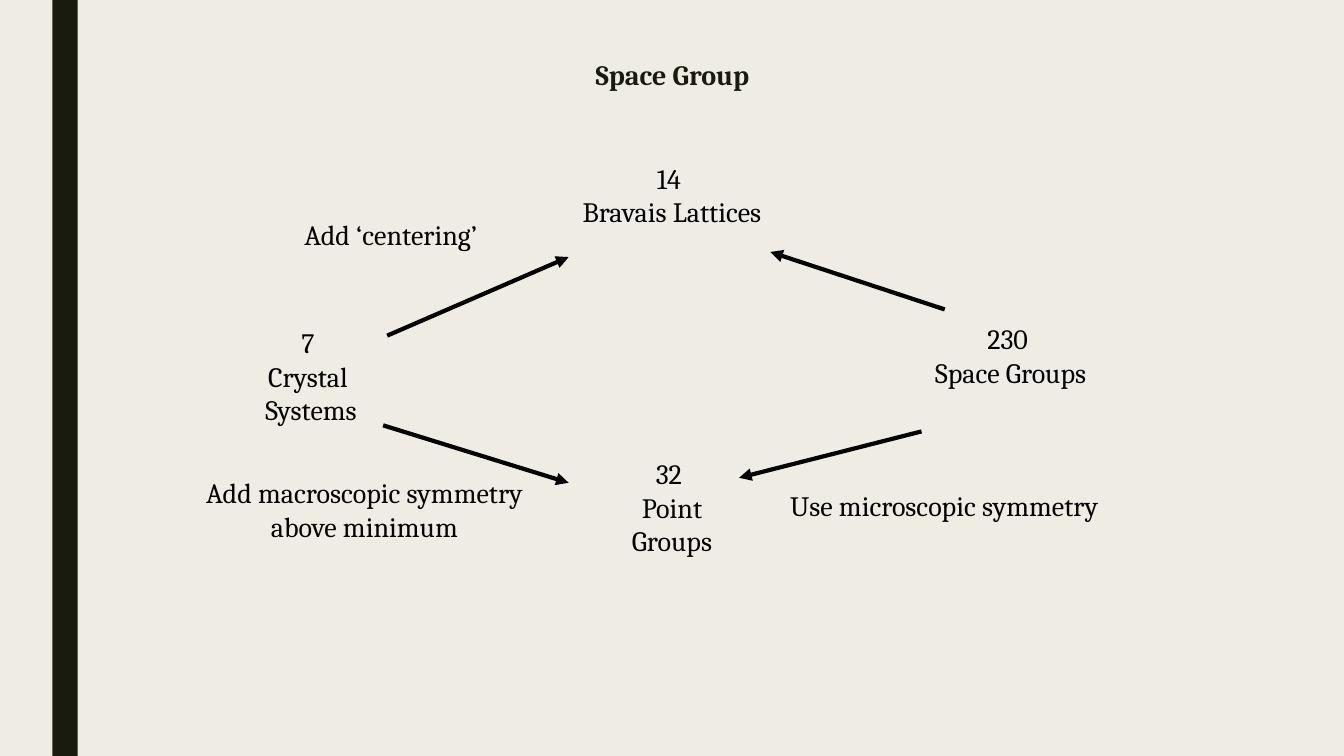
"""Build a slide relating crystal systems, lattices, point groups and space groups."""
from lxml import etree
from pptx import Presentation
from pptx.dml.color import RGBColor
from pptx.enum.shapes import MSO_CONNECTOR, MSO_SHAPE
from pptx.enum.text import PP_ALIGN
from pptx.oxml.ns import qn
from pptx.util import Inches, Pt

BACKGROUND, DARK, BLACK = "EFEDE3", "191B0E", "000000"
FONT, SIZE = "Cambria", 20
GROUP_WIDTH, NOTE_WIDTH = 2.73, 3.35
LINE_HEIGHT, PADDING = 0.335, 0.1

TITLE = ("Space Group", 0.92, 0.55, 11.5, 5.55)
GROUPS = [
    (["14 ", "Bravais Lattices"], 5.3, 1.55),
    (["7 ", "Crystal ", "Systems"], 1.72, 3.18),
    (["32 ", "Point", "Groups"], 5.3, 4.48),
    (["230 ", "Space Groups"], 8.66, 3.14),
]
NOTES = [
    ("Add ‘centering’", 2.2, 2.11, 0.44),
    ("Use microscopic symmetry", 7.69, 4.8, 0.77),
    ("Add macroscopic symmetry above minimum", 1.94, 4.67, 1.11),
]
ARROWS = [
    (3.84, 3.33, 5.64, 2.55),
    (3.8, 4.22, 5.64, 4.79),
    (9.37, 3.07, 7.64, 2.5),
    (9.14, 4.28, 7.33, 4.74),
]


def color(value):
    return RGBColor.from_string(value)


def add_text(slide, lines, left, top, width, height, ink=BLACK, bold=False, spacing=1.0):
    box = slide.shapes.add_textbox(*map(Inches, (left, top, width, height)))
    frame = box.text_frame
    frame.word_wrap = True
    frame.text = "\n".join(lines)
    for paragraph in frame.paragraphs:
        paragraph.alignment = PP_ALIGN.CENTER
        paragraph.line_spacing = spacing
        paragraph.font.name = FONT
        paragraph.font.size = Pt(SIZE)
        paragraph.font.bold = bold
        paragraph.font.color.rgb = color(ink)


def add_arrow(slide, points):
    arrow = slide.shapes.add_connector(MSO_CONNECTOR.STRAIGHT, *map(Inches, points))
    arrow.line.color.rgb = color(BLACK)
    arrow.line.width = Pt(3)
    etree.SubElement(arrow.line._get_or_add_ln(), qn("a:tailEnd"), type="triangle")
    etree.SubElement(arrow._element.spPr, qn("a:effectLst"))


def main():
    presentation = Presentation()
    presentation.slide_width, presentation.slide_height = Inches(13.33), Inches(7.5)
    slide = presentation.slides.add_slide(presentation.slide_layouts[6])
    slide.background.fill.solid()
    slide.background.fill.fore_color.rgb = color(BACKGROUND)

    stripe = slide.shapes.add_shape(
        MSO_SHAPE.RECTANGLE, Inches(0.52), 0, Inches(0.25), presentation.slide_height)
    stripe.shadow.inherit = False
    stripe.fill.solid()
    stripe.fill.fore_color.rgb = color(DARK)
    stripe.line.fill.background()

    title, *place = TITLE
    add_text(slide, [title], *place, ink=DARK, bold=True, spacing=0.94)
    for lines, left, top in GROUPS:
        add_text(slide, lines, left, top, GROUP_WIDTH, PADDING + LINE_HEIGHT * len(lines))
    for points in ARROWS:
        add_arrow(slide, points)
    for note, left, top, height in NOTES:
        add_text(slide, [note], left, top, NOTE_WIDTH, height)

    presentation.save("out.pptx")


if __name__ == "__main__":
    main()
